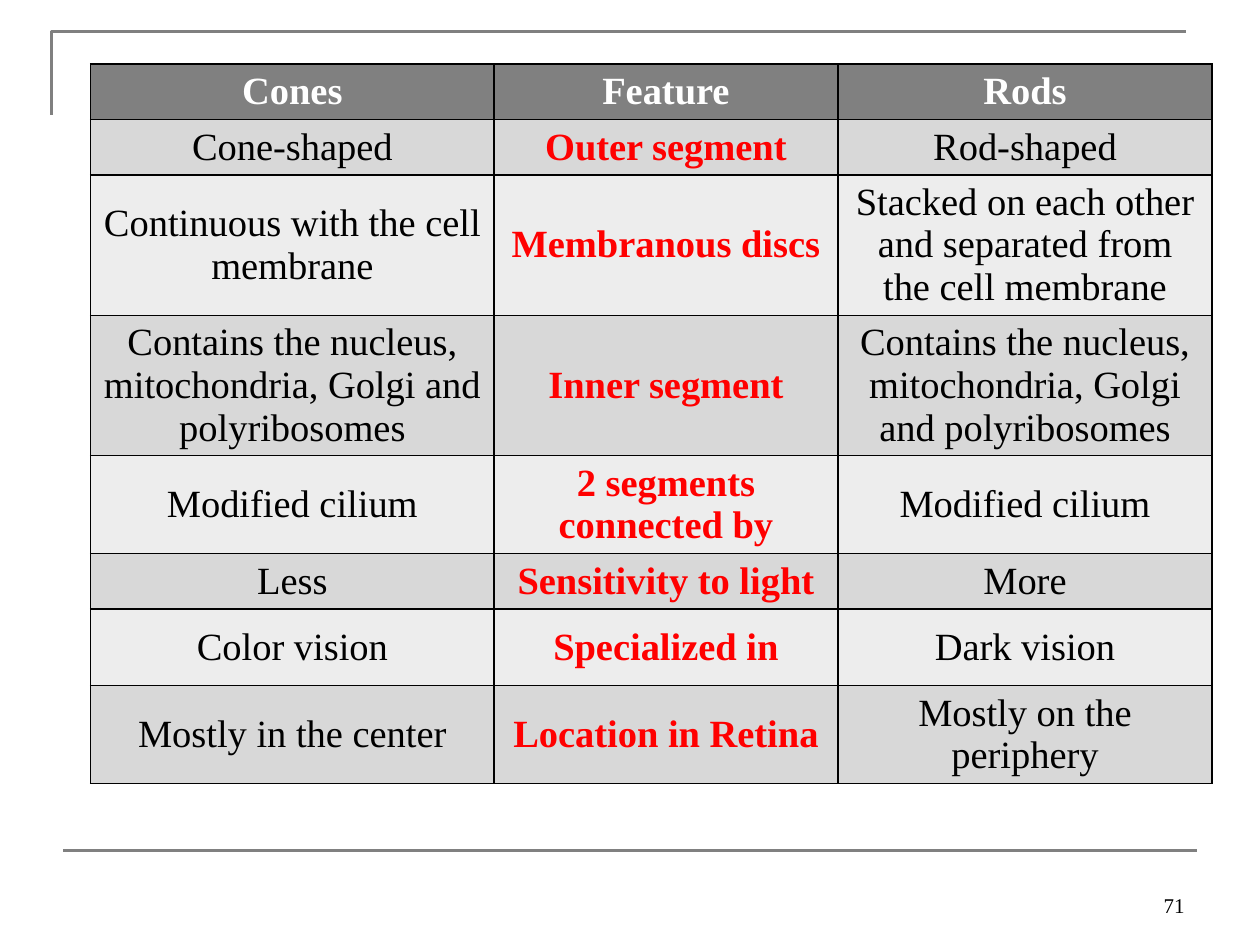
from lxml.etree import SubElement
from pptx import Presentation
from pptx.dml.color import RGBColor
from pptx.enum.shapes import MSO_CONNECTOR
from pptx.enum.text import MSO_ANCHOR, PP_ALIGN
from pptx.oxml.ns import qn
from pptx.util import Inches, Pt

COLORS = {
    "rule": "808080", "header": "808080", "dark_band": "D8D8D8",
    "light_band": "EDEDED", "border": "000000", "text": "000000",
    "header_text": "FFFFFF", "feature": "FF0000",
}
FONT = "Times New Roman"
ORGANELLES = "Contains the nucleus, mitochondria, Golgi and polyribosomes"
ROWS = [
    ("Cones", "Feature", "Rods"),
    ("Cone-shaped", "Outer segment", "Rod-shaped"),
    ("Continuous with the cell membrane", "Membranous discs",
     "Stacked on each other and separated from the cell membrane"),
    (ORGANELLES, "Inner segment", ORGANELLES),
    ("Modified cilium", "2 segments connected by", "Modified cilium"),
    ("Less", "Sensitivity to light", "More"),
    ("Color vision", "Specialized in", "Dark vision"),
    ("Mostly in the center", "Location in Retina", "Mostly on the periphery"),
]
COLUMN_WIDTHS = (3.2, 2.73, 2.97)
ROW_HEIGHT = 0.41
TALL_ROWS = {6: 0.61}
TABLE_LINE_SPACING = 24.35
FEATURE_COLUMN = 1


def color(name):
    return RGBColor.from_string(COLORS[name])


class SlideBuilder:
    def __init__(self, slide):
        self.slide = slide

    def style_line(self, shape):
        shape.line.color.rgb = color("rule")
        shape.line.width = Pt(1.5)

    def corner(self, points):
        start, *others = [(Inches(x), Inches(y)) for x, y in points]
        builder = self.slide.shapes.build_freeform(*start)
        builder.add_line_segments(others, close=False)
        shape = builder.convert_to_shape()
        shape.shadow.inherit = False
        shape.fill.background()
        self.style_line(shape)

    def rule(self, left, right, y):
        connector = self.slide.shapes.add_connector(
            MSO_CONNECTOR.STRAIGHT, Inches(left), Inches(y), Inches(right), Inches(y))
        SubElement(connector._element.spPr, qn("a:effectLst"))
        self.style_line(connector)

    def style_text(self, text_frame, size, color_name, alignment, bold=False):
        paragraph = text_frame.paragraphs[0]
        paragraph.alignment = alignment
        for run in paragraph.runs:
            run.font.name = FONT
            run.font.size = Pt(size)
            run.font.bold = bold
            run.font.color.rgb = color(color_name)

    def page_number(self, text, left, top, width, height):
        box = self.slide.shapes.add_textbox(
            Inches(left), Inches(top), Inches(width), Inches(height))
        text_frame = box.text_frame
        text_frame.word_wrap = True
        text_frame.vertical_anchor = MSO_ANCHOR.BOTTOM
        text_frame.text = text
        self.style_text(text_frame, 12, "text", PP_ALIGN.RIGHT)

    def border_cell(self, cell):
        """Add the four borders, which must come before the fill in the XML."""
        properties = cell._tc.get_or_add_tcPr()
        for side in ("a:lnL", "a:lnR", "a:lnT", "a:lnB"):
            line = SubElement(properties, qn(side), w=str(Pt(1)))
            fill = SubElement(line, qn("a:solidFill"))
            SubElement(fill, qn("a:srgbClr"), val=COLORS["border"])

    def table(self, rows, left, top):
        heights = [TALL_ROWS.get(index, ROW_HEIGHT) for index in range(len(rows))]
        table = self.slide.shapes.add_table(
            len(rows), len(COLUMN_WIDTHS), Inches(left), Inches(top),
            Inches(sum(COLUMN_WIDTHS)), Inches(sum(heights))).table
        for column, width in zip(table.columns, COLUMN_WIDTHS):
            column.width = Inches(width)
        for row, height in zip(table.rows, heights):
            row.height = Inches(height)
        for row_index, texts in enumerate(rows):
            is_header = row_index == 0
            band = "header" if is_header else "dark_band" if row_index % 2 else "light_band"
            for column_index, text in enumerate(texts):
                is_feature = column_index == FEATURE_COLUMN
                text_color = ("header_text" if is_header
                              else "feature" if is_feature else "text")
                cell = table.cell(row_index, column_index)
                self.border_cell(cell)
                cell.fill.solid()
                cell.fill.fore_color.rgb = color(band)
                cell.vertical_anchor = MSO_ANCHOR.MIDDLE
                cell.text_frame.text = text
                cell.text_frame.paragraphs[0].line_spacing = Pt(TABLE_LINE_SPACING)
                self.style_text(cell.text_frame, 22, text_color, PP_ALIGN.CENTER,
                                bold=is_header or is_feature)


def main():
    presentation = Presentation()
    presentation.slide_width = Inches(10)
    presentation.slide_height = Inches(7.5)
    blank_layout = presentation.slide_layouts[6]
    builder = SlideBuilder(presentation.slides.add_slide(blank_layout))
    builder.corner([(0.41, 0.91), (0.41, 0.25), (9.41, 0.25)])
    builder.rule(0.5, 9.5, 6.75)
    builder.page_number("71", 7.17, 6.83, 2.33, 0.5)
    builder.table(ROWS, 0.72, 0.51)
    presentation.save("out.pptx")


if __name__ == "__main__":
    main()
